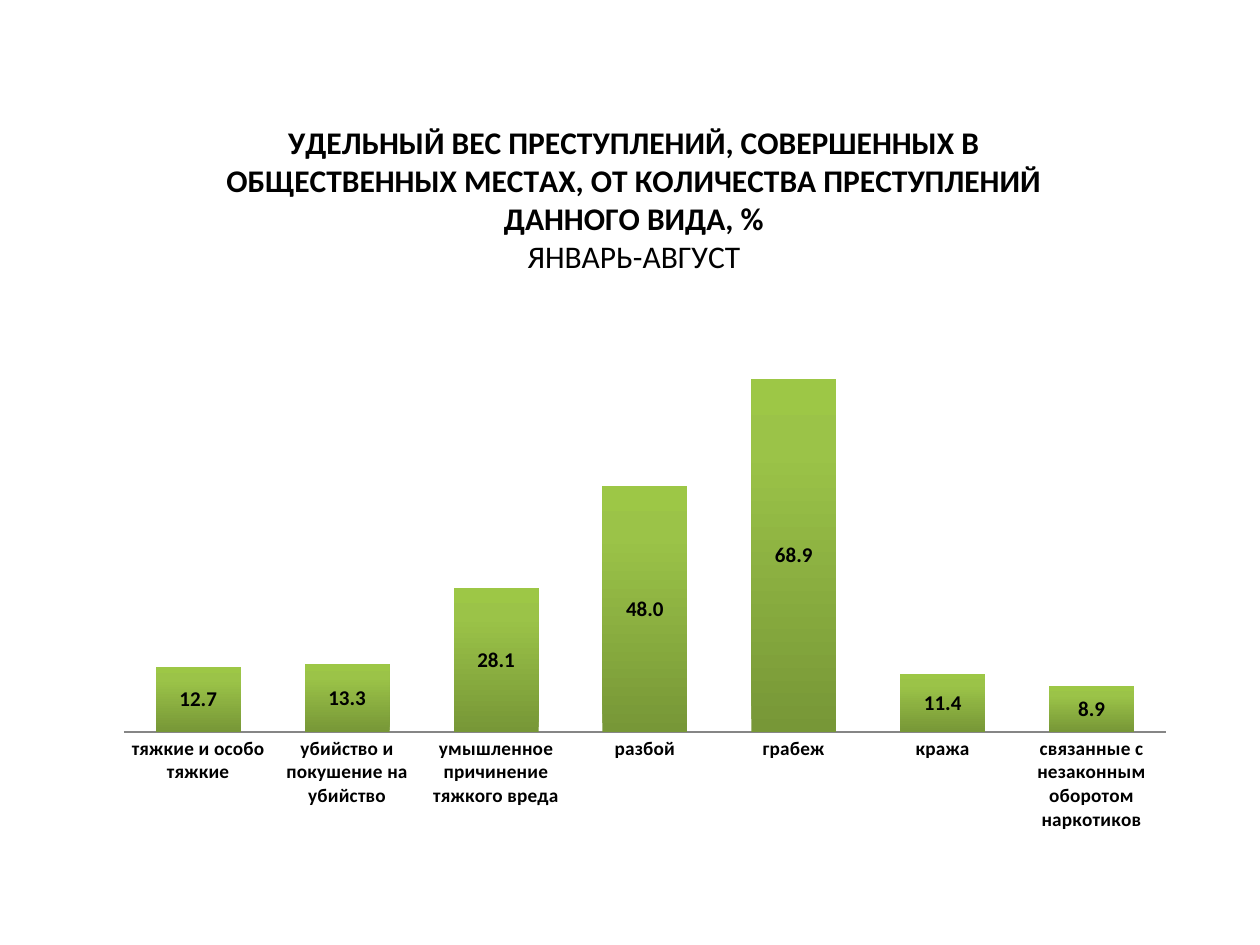
from pptx import Presentation
from pptx.chart.data import CategoryChartData as Data
from pptx.dml.color import RGBColor as Rgb
from pptx.enum.chart import XL_CHART_TYPE as Kind, XL_LABEL_POSITION as Spot
from pptx.enum.chart import XL_TICK_MARK as Tick
from pptx.oxml import parse_xml
from pptx.oxml.ns import nsdecls
from pptx.util import Inches, Pt

HUES = {"ink": "000000", "axis": "868686", "low": "779737",
        "mid": "9BC348", "top": "9DC746"}
STOPS = [(0, "low"), (80, "mid"), (100, "top")]
TITLE = [
    ("УДЕЛЬНЫЙ ВЕС ПРЕСТУПЛЕНИЙ, СОВЕРШЕННЫХ В ОБЩЕСТВЕННЫХ МЕСТАХ, "
     "ОТ КОЛИЧЕСТВА ПРЕСТУПЛЕНИЙ ДАННОГО ВИДА, %", True),
    ("ЯНВАРЬ-АВГУСТ", False),
]
CRIMES = {
    "тяжкие и особо тяжкие": 12.7,
    "убийство и покушение на убийство": 13.3,
    "умышленное причинение тяжкого вреда": 28.1,
    "разбой": 48,
    "грабеж": 68.9,
    "кража": 11.4,
    "связанные с незаконным оборотом наркотиков": 8.9,
}


class Deck:
    face = "Calibri"

    def __init__(self, wide, high):
        self.prs = Presentation()
        self.prs.slide_width, self.prs.slide_height = Inches(wide), Inches(high)
        self.slide = self.prs.slides.add_slide(self.prs.slide_layouts[6])

    def style(self, font, size, bold):
        font.name, font.size, font.bold = self.face, Pt(size), bold
        font.color.rgb = Rgb.from_string(HUES["ink"])

    def chart(self, name, vals, x, y, w, h):
        data = Data(number_format="0.0")
        data.categories = list(vals)
        data.add_series(name, list(vals.values()))
        wide, high = self.prs.slide_width, self.prs.slide_height
        box = int(x * wide), int(y * high), int(w * wide), int(h * high)
        chart = self.slide.shapes.add_chart(Kind.COLUMN_STACKED, *box, data).chart
        chart.has_legend = False
        self.style(chart.font, 18, False)
        return chart

    def title(self, chart, lines, size):
        frame = chart.chart_title.text_frame
        for i, (text, bold) in enumerate(lines):
            para = frame.add_paragraph() if i else frame.paragraphs[0]
            run = para.add_run()
            run.text = text
            self.style(run.font, size, bold)
        chart.chart_title.include_in_layout = False

    def place(self, node, inner=False, **share):
        for old in node.findall("{*}layout"):
            node.remove(old)
        target = '<c:layoutTarget val="inner"/>' if inner else ""
        modes = "".join(f'<c:{k}Mode val="edge"/>' for k in "xy")
        sizes = "".join(f'<c:{k} val="{v}"/>' for k, v in share.items())
        layout = parse_xml(
            f'<c:layout {nsdecls("c")}><c:manualLayout>{target}{modes}{sizes}'
            "</c:manualLayout></c:layout>")
        text = node.find("{*}tx")
        node.insert(0 if text is None else 1, layout)

    def axes(self, chart, size, peak):
        cat, val = chart.category_axis, chart.value_axis
        cat.major_tick_mark = cat.minor_tick_mark = Tick.NONE
        cat.format.line.color.rgb = Rgb.from_string(HUES["axis"])
        self.style(cat.tick_labels.font, size, True)
        val.visible = val.has_major_gridlines = False
        val.minimum_scale, val.maximum_scale = 0, peak

    def bars(self, chart, gap, size):
        plot = chart.plots[0]
        plot.gap_width, plot.overlap = gap, 100
        plot.vary_by_categories = False
        row = plot.series[0]
        row.invert_if_negative = False
        stops = "".join(
            f'<a:gs pos="{pos * 1000}"><a:srgbClr val="{HUES[hue]}"/></a:gs>'
            for pos, hue in STOPS)
        row.format.fill.background()
        props = row.format.fill._xPr
        props.replace(props[0], parse_xml(
            f'<a:gradFill {nsdecls("a")} rotWithShape="1"><a:gsLst>{stops}</a:gsLst>'
            '<a:lin ang="16200000" scaled="0"/></a:gradFill>'))
        tags = row.data_labels
        tags.show_value = True
        tags.number_format, tags.number_format_is_linked = "0.0", False
        tags.position = Spot.CENTER
        self.style(tags.font, size, True)


def main():
    deck = Deck(10, 7.5)
    chart = deck.chart("Series 1", CRIMES, 0.083, 0.101, 0.851, 0.788)
    deck.title(chart, TITLE, 18)
    deck.place(chart.chart_title._element, x=0.11, y=0.03)
    deck.axes(chart, 11, 80)
    deck.bars(chart, 75, 12)
    area = chart._chartSpace.chart.plotArea
    deck.place(area, True, x=0.018, y=0.305, w=0.972, h=0.55)
    deck.prs.save("out.pptx")


if __name__ == "__main__":
    main()
